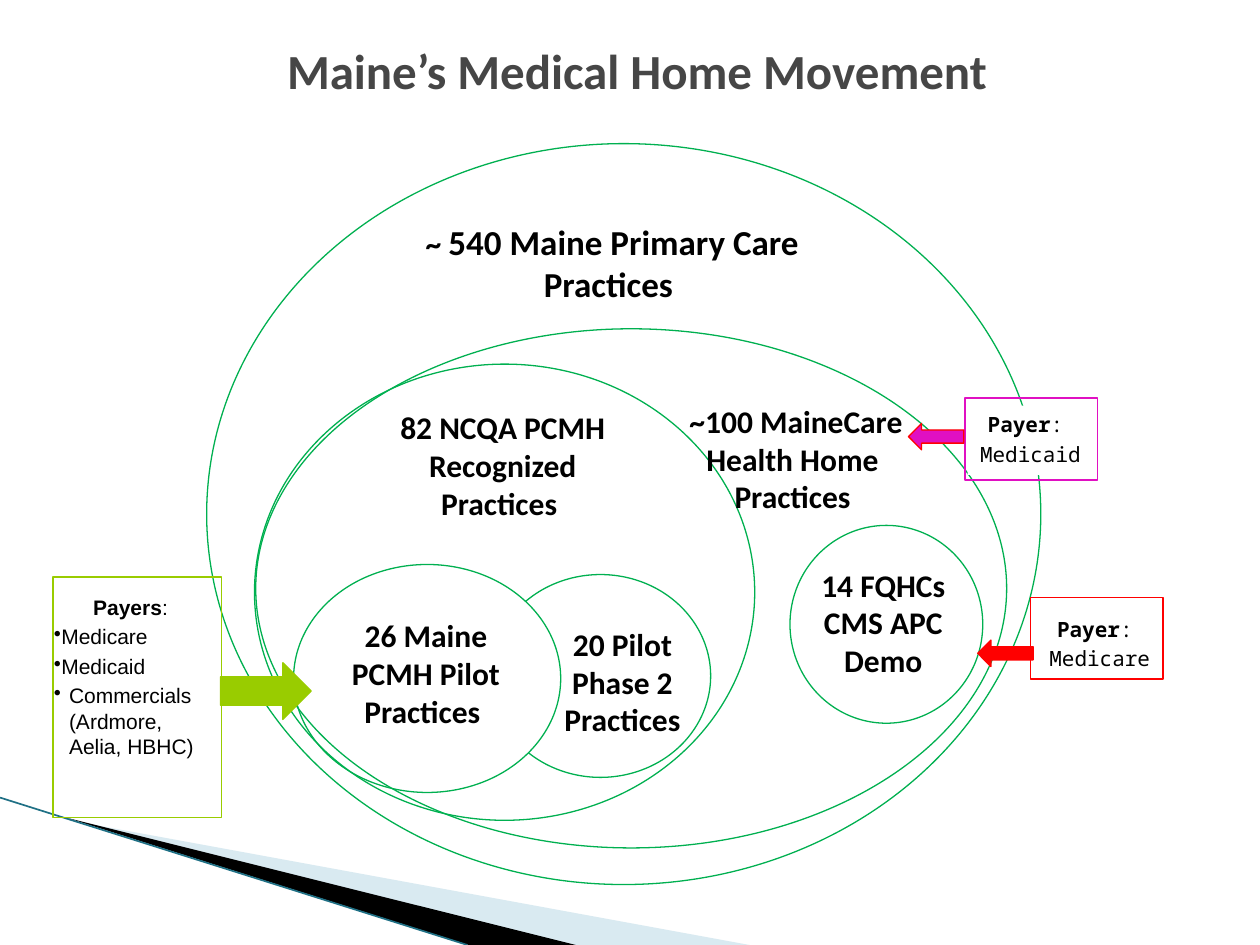
from dataclasses import dataclass

from lxml import etree
from pptx import Presentation
from pptx.dml.color import RGBColor
from pptx.enum.shapes import MSO_CONNECTOR, MSO_SHAPE
from pptx.enum.text import MSO_ANCHOR, PP_ALIGN
from pptx.oxml.ns import qn
from pptx.util import Pt

PX = 9144
CENTER, LEFT = PP_ALIGN.CENTER, PP_ALIGN.LEFT
TOP, MIDDLE = MSO_ANCHOR.TOP, MSO_ANCHOR.MIDDLE
OVAL, RECT = MSO_SHAPE.OVAL, MSO_SHAPE.RECTANGLE
LEFT_ARROW, RIGHT_ARROW = MSO_SHAPE.LEFT_ARROW, MSO_SHAPE.RIGHT_ARROW
STRAIGHT = MSO_CONNECTOR.STRAIGHT


@dataclass(frozen=True)
class Theme:
    """Colours, fonts and type sizes of the slide."""
    white: str = "FFFFFF"
    ink: str = "000000"
    title: str = "464646"
    ring: str = "00B050"
    lime: str = "99CC00"
    red: str = "FF0000"
    magenta: str = "E010C2"
    wedge: str = "A0CBDC"
    edge: str = "1F7085"
    head: str = "Calibri"
    body: str = "Arial"
    mono: str = "Noto Sans Mono"
    title_size: int = 28
    large: int = 20
    medium: int = 18
    small: int = 12
    line: float = 0.75


T = Theme()


def emu(*lengths):
    """Turn px lengths into EMU."""
    return [n * PX for n in lengths]


def rgb(code):
    """Turn a hex code into a colour."""
    return RGBColor.from_string(code)


def add_shape(s, kind, box, fill=None, line=None):
    """Add a preset shape with the given fill and outline."""
    sp = s.shapes.add_shape(kind, *emu(*box))
    sp.shadow.inherit = False
    if fill:
        sp.fill.solid()
        sp.fill.fore_color.rgb = rgb(fill)
    else:
        sp.fill.background()
    sp.line.color.rgb = rgb(line)
    sp.line.width = Pt(T.line)
    return sp


def add_text(s, box, anchor=TOP):
    """Add a wrapping text box and return it."""
    sp = s.shapes.add_textbox(*emu(*box))
    tf = sp.text_frame
    tf.word_wrap = True
    tf.vertical_anchor = anchor
    return sp


def add_run(p, text, font, size, bold=False, color=T.ink):
    """Append a formatted run to a paragraph."""
    r = p.add_run()
    r.text = text
    r.font.name, r.font.size, r.font.bold = font, Pt(size), bold
    r.font.color.rgb = rgb(color)


def add_bullet(p, indent):
    """Give a paragraph a round bullet with a hanging indent."""
    pPr = p._p.get_or_add_pPr()
    pPr.set("marL", str(indent * PX))
    pPr.set("indent", str(-indent * PX))
    etree.SubElement(pPr, qn("a:buChar")).set("char", "•")


def draw_backdrop(s, box):
    """Draw the corner wedges and their edge line."""
    x, y, w, h = box
    wedges = [
        (T.wedge, 40, [(55, 18), (595, h), (456, h)]),
        (T.ink, 100, [(53, 16), (457, h), (372, h)]),
    ]
    for color, opacity, points in wedges:
        (x0, y0), *rest = [(x + px, y + py) for px, py in points]
        builder = s.shapes.build_freeform(x0, y0, scale=PX)
        builder.add_line_segments(rest, close=True)
        sp = builder.convert_to_shape()
        sp.shadow.inherit = False
        sp.fill.solid()
        sp.fill.fore_color.rgb = rgb(color)
        sp.line.fill.background()
        clr = sp.fill._xPr.find(".//" + qn("a:srgbClr"))
        etree.SubElement(clr, qn("a:alpha")).set("val", str(opacity * 1000))
    edge = s.shapes.add_connector(STRAIGHT, *emu(x, y, x + 371, y + h))
    edge.line.color.rgb = rgb(T.edge)
    edge.line.width = Pt(0.95)
    etree.SubElement(edge._element.spPr, qn("a:effectLst"))


def draw_title(s, box):
    """Write the slide title."""
    p = add_text(s, box, MIDDLE).text_frame.paragraphs[0]
    add_run(p, "Maine’s Medical Home Movement", T.head, T.title_size, True, T.title)


def draw_ring(s, box, label, runs, fill=None):
    """Draw one group of practices with its label inside the ring."""
    x, y = box[:2]
    add_shape(s, OVAL, box, fill, T.ring)
    dx, dy, w, h = label
    p = add_text(s, (x + dx, y + dy, w, h)).text_frame.paragraphs[0]
    p.alignment = CENTER
    for text, size in runs:
        add_run(p, text, T.head, size, True)


def draw_payer(s, box, color, arrow, label, heading, items, font, fill=None):
    """Draw a payer card with its arrow, heading and items."""
    x, y = box[:2]
    add_shape(s, RECT, box, line=color)
    kind, dx, dy, w, h, edge = arrow
    add_shape(s, kind, (x + dx, y + dy, w, h), color, edge)
    dx, dy, w, h = label
    sp = add_text(s, (x + dx, y + dy, w, h))
    if fill:
        sp.fill.solid()
        sp.fill.fore_color.rgb = rgb(fill)
    tf = sp.text_frame
    tf.margin_right = 8 * PX
    p = tf.paragraphs[0]
    p.alignment = CENTER
    add_run(p, heading, font, T.small, True)
    add_run(p, ": ", font, T.small)
    for text, indent in items:
        p = tf.add_paragraph()
        p.alignment = LEFT
        p.space_before = Pt(2.4)
        if indent is not None:
            add_bullet(p, indent)
        add_run(p, text, font, T.small)


def main():
    """Build and save the slide."""
    prs = Presentation()
    prs.slide_width, prs.slide_height = emu(1000, 750)
    s = prs.slides.add_slide(prs.slide_layouts[6])
    draw_backdrop(s, (0, 633, 595, 117))
    draw_title(s, (218, 15, 686, 81))
    m = T.medium
    rings = [
        ((389, 456, 175, 161), (44, 35, 122, 101),
         [("20 Pilot Phase 2 Practices", m)], None),
        ((164, 114, 662, 588), (116, 56, 412, 77),
         [("~ ", m), ("540 Maine Primary Care Practices ", T.large)], None),
        ((233, 448, 212, 181), (26, 36, 158, 101),
         [("26 Maine PCMH Pilot Practices ", m)], T.white),
        ((627, 417, 153, 157), (-5, 27, 158, 101),
         [("14 FQHCs CMS APC Demo", m)], T.white),
        ((202, 289, 397, 362), (95, 30, 204, 101),
         [("82 NCQA PCMH Recognized Practices ", m)], None),
        ((203, 261, 596, 412), (324, 53, 204, 101),
         [(" ~100 MaineCare Health Home Practices", m)], None),
    ]
    for ring in rings:
        draw_ring(s, *ring)
    draw_payer(s, (42, 458, 134, 191), T.lime,
               (RIGHT_ARROW, 133, 68, 72, 45, T.lime), (-9, 9, 144, 143), "Payers",
               [("Medicare", 0), ("Medicaid", 0),
                ("Commercials (Ardmore, Aelia, HBHC)", 12)], T.body)
    draw_payer(s, (818, 474, 105, 65), T.red,
               (LEFT_ARROW, -42, 34, 44, 21, T.red), (5, 10, 100, 55), "Payer",
               [("Medicare", None)], T.mono)
    draw_payer(s, (766, 316, 105, 65), T.magenta,
               (LEFT_ARROW, -45, 20, 44, 21, T.red), (2, 6, 100, 55), "Payer",
               [("Medicaid", None)], T.mono, T.white)
    prs.save("out.pptx")


if __name__ == "__main__":
    main()
